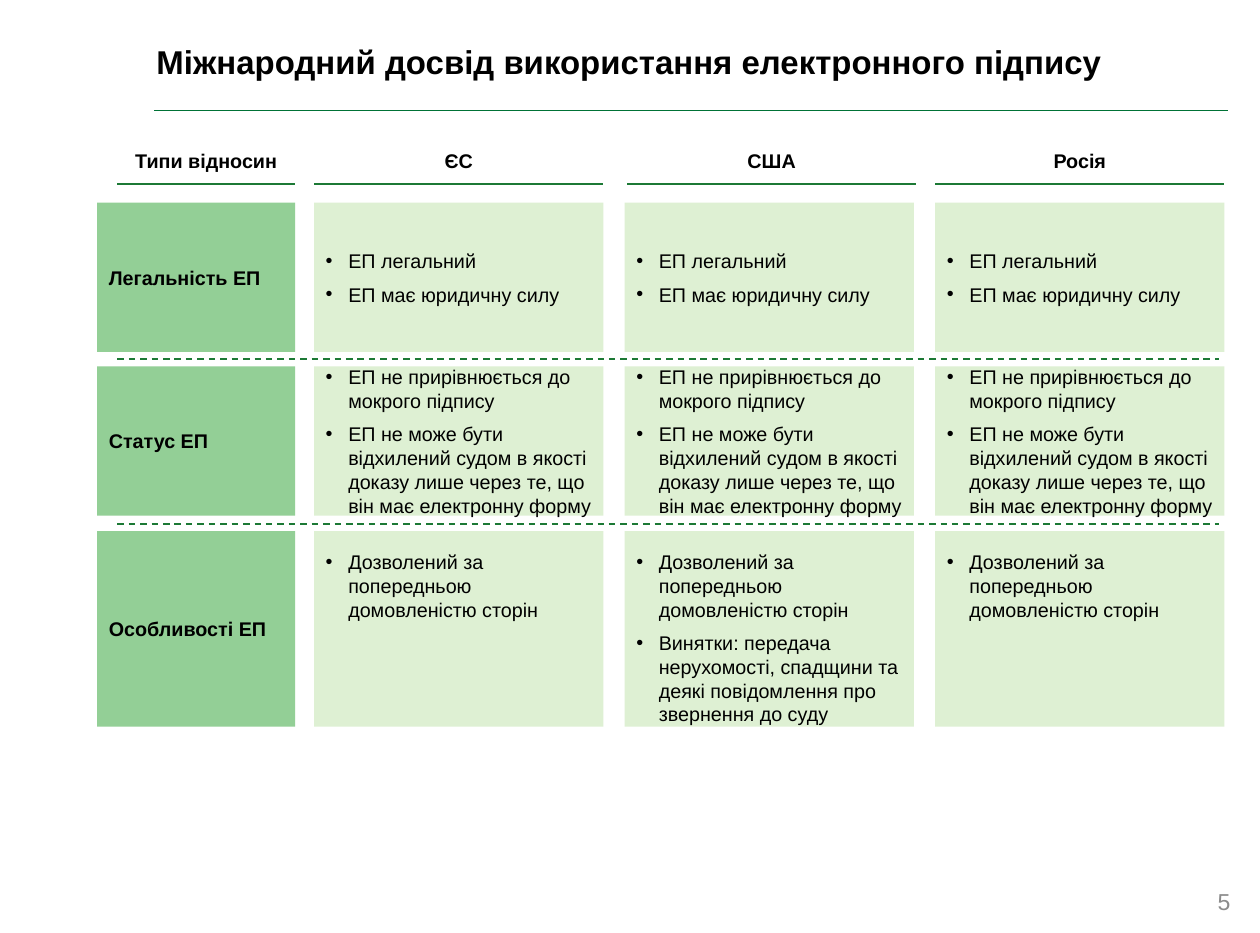
from dataclasses import dataclass

from lxml.etree import SubElement
from pptx import Presentation
from pptx.dml.color import RGBColor
from pptx.enum.dml import MSO_LINE
from pptx.enum.shapes import MSO_CONNECTOR, MSO_SHAPE
from pptx.enum.text import MSO_ANCHOR, PP_ALIGN
from pptx.oxml.ns import qn
from pptx.util import Inches, Pt


@dataclass(frozen=True)
class Theme:
    font: str = "Arial"
    text: str = "000000"
    title_rule: str = "007236"
    rule: str = "1C7935"
    label_fill: str = "93CF96"
    cell_fill: str = "DEF0D3"
    page: str = "8C8C8C"
    title_size: int = 20
    page_size: int = 14
    body_size: int = 12


theme = Theme()
prs = Presentation()
prs.slide_width, prs.slide_height = Inches(10.63), Inches(7.87)
s = prs.slides.add_slide(prs.slide_layouts[6])


def add_text(lines, box, fill=None, size=theme.body_size, color=theme.text,
             bold=False, align=PP_ALIGN.LEFT, anchor=MSO_ANCHOR.TOP,
             insets=(0.1, 0.05, 0.1, 0.05), bullet=False):
    box = [Inches(v) for v in box]
    if fill:
        sp = s.shapes.add_shape(MSO_SHAPE.RECTANGLE, *box)
        sp.shadow.inherit = False
        sp.fill.solid()
        sp.fill.fore_color.rgb = RGBColor.from_string(fill)
        sp.line.fill.background()
    else:
        sp = s.shapes.add_textbox(*box)
    tf = sp.text_frame
    tf.word_wrap = True
    tf.vertical_anchor = anchor
    tf.margin_left, tf.margin_top, tf.margin_right, tf.margin_bottom = map(Inches, insets)
    for i, line in enumerate(lines):
        p = tf.paragraphs[0] if i == 0 else tf.add_paragraph()
        p.alignment = align
        if bullet:
            pPr = p._p.get_or_add_pPr()
            pPr.set("marL", str(Inches(0.19)))
            pPr.set("indent", str(-Inches(0.19)))
            SubElement(pPr, qn("a:buFont")).set("typeface", theme.font)
            SubElement(pPr, qn("a:buChar")).set("char", "•")
            if i:
                p.space_before = Pt(6)
        r = p.add_run()
        r.text = line
        r.font.name, r.font.size, r.font.bold = theme.font, Pt(size), bold
        r.font.color.rgb = RGBColor.from_string(color)


def add_rule(x1, x2, y, color=theme.rule, width=1, dashed=False):
    line = s.shapes.add_connector(MSO_CONNECTOR.STRAIGHT, Inches(x1), Inches(y),
                                  Inches(x2), Inches(y))
    line.line.color.rgb = RGBColor.from_string(color)
    line.line.width = Pt(width)
    if dashed:
        line.line.dash_style = MSO_LINE.DASH
    SubElement(line._element.spPr, qn("a:effectLst"))


# Page frame: title, rule and page number
add_rule(1.3, 10.36, 0.93, color=theme.title_rule, width=0.75)
add_text(["Міжнародний досвід використання електронного підпису"],
         (1.32, 0, 8.92, 1.04), size=theme.title_size, bold=True,
         anchor=MSO_ANCHOR.MIDDLE, insets=(0, 0, 0, 0))
add_text(["5"], (9.57, 7.25, 0.92, 0.52), size=theme.page_size, color=theme.page,
         align=PP_ALIGN.RIGHT, anchor=MSO_ANCHOR.BOTTOM,
         insets=(0.11, 0.05, 0.11, 0.05))

# Column headings, each underlined
headings = [
    ("Типи відносин", 0.99, 1.5),
    ("ЄС", 2.65, 2.44),
    ("США", 5.29, 2.44),
    ("Росія", 7.89, 2.44),
]
for heading, x, width in headings:
    add_text([heading], (x, 1.21, width, 0.3), bold=True,
             align=PP_ALIGN.CENTER, insets=(0, 0.05, 0, 0.05))
    add_rule(x, x + width, 1.55)

# Comparison rows: label, top, height, one list of points per country
legality = ["ЕП легальний", "ЕП має юридичну силу"]
status = [
    "ЕП не прирівнюється до мокрого підпису",
    "ЕП не може бути відхилений судом в якості доказу лише через те, "
    "що він має електронну форму",
]
consent = ["Дозволений за попередньою домовленістю сторін"]
exceptions = ["Винятки: передача нерухомості, спадщини та деякі "
              "повідомлення про звернення до суду"]
rows = [
    ("Легальність ЕП", 1.71, 1.26, [legality] * 3),
    ("Статус ЕП", 3.09, 1.26, [status] * 3),
    ("Особливості ЕП", 4.48, 1.65, [consent, consent + exceptions, consent]),
]
for i, (label, top, height, countries) in enumerate(rows):
    if i:
        add_rule(0.99, 10.28, top - 0.06, dashed=True)
    add_text([label], (0.82, top, 1.67, height), fill=theme.label_fill,
             bold=True, anchor=MSO_ANCHOR.MIDDLE)
    # The last row hangs from the top so its first points line up
    last = i == len(rows) - 1
    for col, points in enumerate(countries):
        add_text(points, (2.65 + 2.62 * col, top, 2.44, height),
                 fill=theme.cell_fill, bullet=True,
                 anchor=MSO_ANCHOR.TOP if last else MSO_ANCHOR.MIDDLE,
                 insets=(0.1, 0.16 if last else 0.05, 0.1, 0.05))

prs.save("out.pptx")
